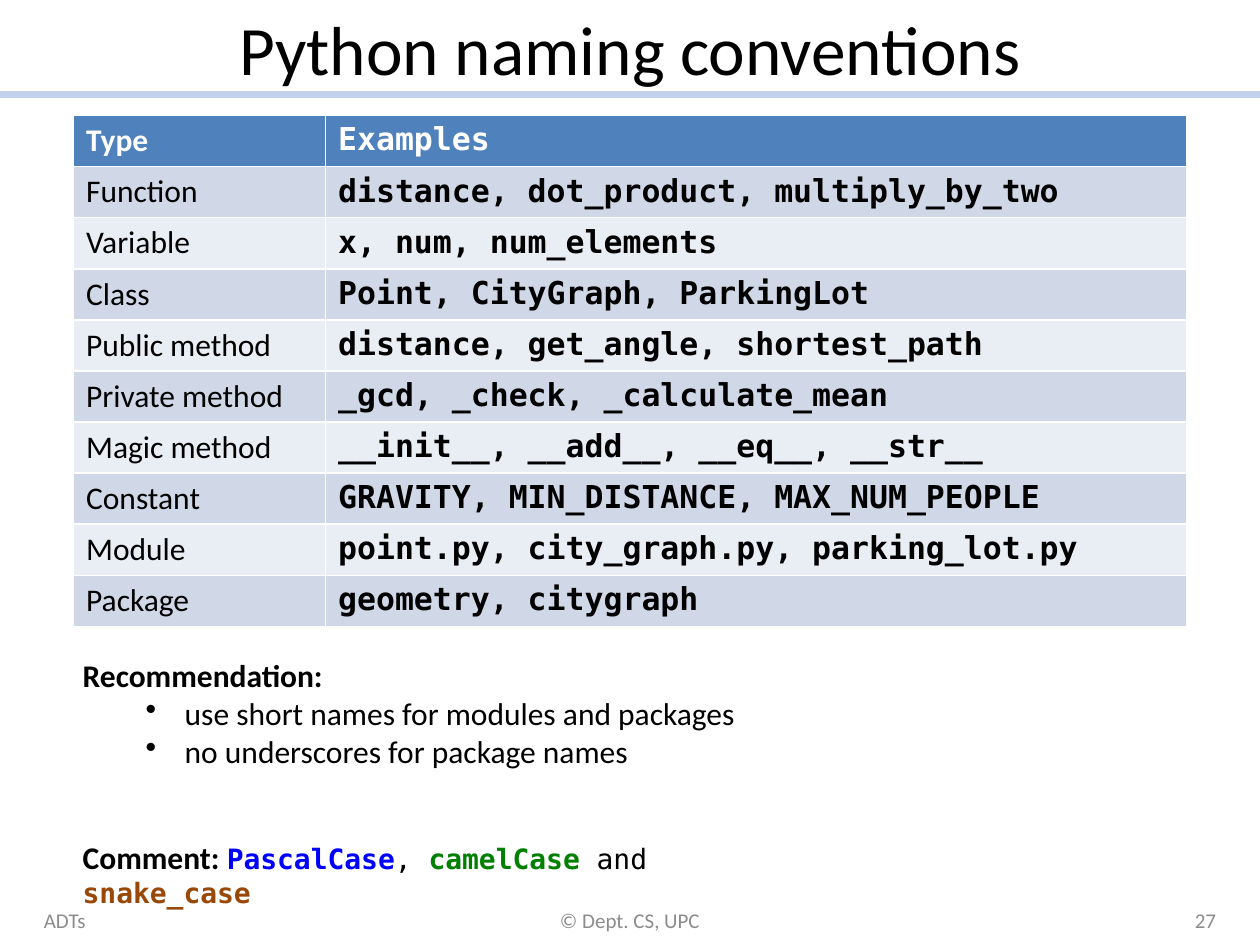
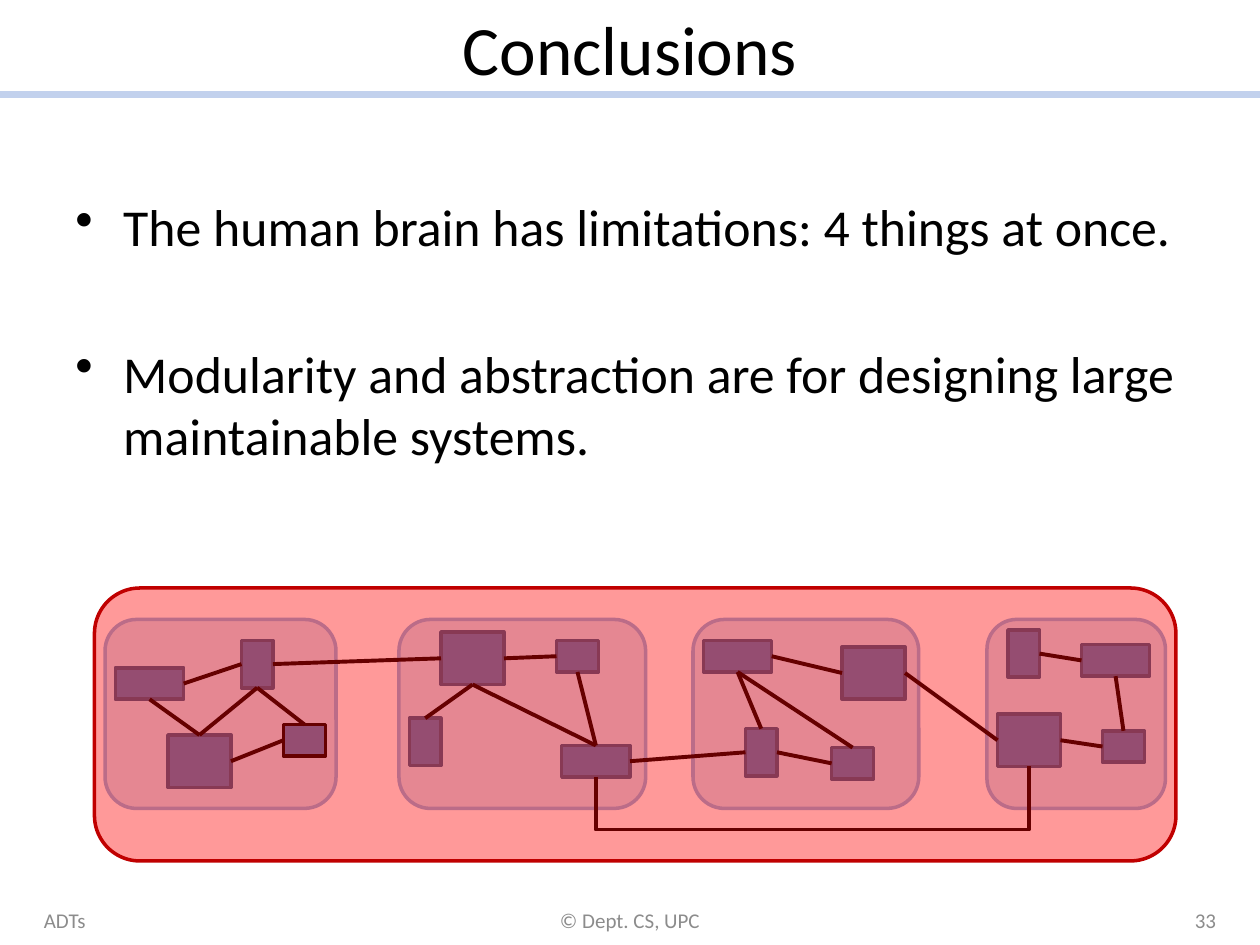
from dataclasses import dataclass

from lxml import etree
from pptx import Presentation
from pptx.dml.color import RGBColor
from pptx.enum.shapes import MSO_CONNECTOR, MSO_SHAPE
from pptx.enum.text import MSO_ANCHOR, PP_ALIGN
from pptx.oxml.ns import qn
from pptx.util import Inches, Pt

STRAIGHT, ELBOW = MSO_CONNECTOR.STRAIGHT, MSO_CONNECTOR.ELBOW
RECT, ROUND_RECT = MSO_SHAPE.RECTANGLE, MSO_SHAPE.ROUNDED_RECTANGLE
TOP_ANCHOR, MIDDLE = MSO_ANCHOR.TOP, MSO_ANCHOR.MIDDLE
LEFT_ALIGN, CENTER, RIGHT_ALIGN = PP_ALIGN.LEFT, PP_ALIGN.CENTER, PP_ALIGN.RIGHT
TOP, LEFT, BOTTOM, RIGHT = range(4)

BLACK = RGBColor(0x00, 0x00, 0x00)
WHITE = RGBColor(0xFF, 0xFF, 0xFF)
GREY = RGBColor(0x8C, 0x8C, 0x8C)
BAND = RGBColor(0xC2, 0xD1, 0xED)
BLUE = RGBColor(0x4F, 0x81, 0xBD)
BLUE_EDGE = RGBColor(0x3A, 0x5F, 0x8C)
ROW_DARK = RGBColor(0xD0, 0xD8, 0xE8)
ROW_LIGHT = RGBColor(0xE9, 0xED, 0xF4)
PALE_BLUE = RGBColor(0xC6, 0xD9, 0xF1)
PALE_EDGE = RGBColor(0x8E, 0xB4, 0xE3)
RED = RGBColor(0xFF, 0x00, 0x00)
DARK_RED = RGBColor(0xC0, 0x00, 0x00)
PASCAL = RGBColor(0x00, 0x00, 0xFF)
CAMEL = RGBColor(0x00, 0x80, 0x00)
SNAKE = RGBColor(0x98, 0x48, 0x07)

SANS, MONO = "Calibri", "DejaVu Sans Mono"
COLS, ROWS = 120, 90
CELL = Inches(10) // COLS

NAMING = [
    ("Type", "Examples"),
    ("Function", "distance, dot_product, multiply_by_two"),
    ("Variable", "x, num, num_elements"),
    ("Class", "Point, CityGraph, ParkingLot"),
    ("Public method", "distance, get_angle, shortest_path"),
    ("Private method", "_gcd, _check, _calculate_mean"),
    ("Magic method", "__init__, __add__, __eq__, __str__"),
    ("Constant", "GRAVITY, MIN_DISTANCE, MAX_NUM_PEOPLE"),
    ("Module", "point.py, city_graph.py, parking_lot.py"),
    ("Package", "geometry, citygraph"),
]

SUBSYSTEM_WIDTHS = (22, 23.5, 21.5, 17)
PART_SIZES = {"small": (4, 3), "wide": (6.5, 3), "big": (6, 5), "tall": (3, 4.5)}
PARTS = [
    {"small": (27, 69), "wide": (11, 63.6), "big": (16, 70), "tall": (23, 61)},
    {"small": (53, 61), "wide": (53.5, 71), "big": (42, 60.2), "tall": (39, 68.4)},
    {"small": (79.2, 71.2), "wide": (67, 61), "big": (80.2, 61.6), "tall": (71, 69.4)},
    {"small": (105, 69.6), "wide": (103, 61.4), "big": (95, 68), "tall": (96, 60)},
]
LINKS = [
    (0, "tall", BOTTOM, 0, "small", TOP),
    (0, "small", LEFT, 0, "big", RIGHT),
    (0, "wide", BOTTOM, 0, "big", TOP),
    (0, "wide", RIGHT, 0, "tall", LEFT),
    (0, "tall", BOTTOM, 0, "big", TOP),
    (1, "big", BOTTOM, 1, "tall", TOP),
    (1, "big", BOTTOM, 1, "wide", TOP),
    (1, "big", RIGHT, 1, "small", LEFT),
    (1, "small", BOTTOM, 1, "wide", TOP),
    (2, "wide", RIGHT, 2, "big", LEFT),
    (2, "wide", BOTTOM, 2, "tall", TOP),
    (2, "tall", RIGHT, 2, "small", LEFT),
    (2, "wide", BOTTOM, 2, "small", TOP),
    (3, "wide", LEFT, 3, "tall", RIGHT),
    (3, "big", RIGHT, 3, "small", LEFT),
    (3, "wide", BOTTOM, 3, "small", TOP),
    (0, "tall", RIGHT, 1, "big", LEFT),
    (1, "wide", RIGHT, 2, "tall", LEFT),
    (2, "big", RIGHT, 3, "big", LEFT),
]


@dataclass
class Run:
    """A piece of text with one look."""
    text: str
    size: float = 18
    bold: bool = False
    color: RGBColor = BLACK
    font: str = SANS


@dataclass
class Para:
    """A paragraph; a bullet has a left margin and a hanging indent in inches."""
    runs: list
    align: PP_ALIGN = LEFT_ALIGN
    bullet: tuple = ()
    before: float = 0


def grid(*cells):
    """Turn grid columns and rows into lengths."""
    return [round(c * CELL) for c in cells]


def fill_para(p, para):
    """Write one paragraph run by run."""
    p.alignment = para.align
    p.space_before = Pt(para.before)
    if para.bullet:
        margin, hang = para.bullet
        pPr = p._p.get_or_add_pPr()
        pPr.set("marL", str(Inches(margin)))
        pPr.set("indent", str(-Inches(hang)))
        etree.SubElement(pPr, qn("a:buChar")).set("char", "•")
    for run in para.runs:
        r = p.add_run()
        r.text = run.text
        r.font.name = run.font
        r.font.size = Pt(run.size)
        r.font.bold = run.bold
        r.font.color.rgb = run.color


def add_text(s, box, paras, anchor=TOP_ANCHOR):
    """Add a wrapping text box."""
    tf = s.shapes.add_textbox(*grid(*box)).text_frame
    tf.word_wrap = True
    tf.vertical_anchor = anchor
    for i, para in enumerate(paras):
        fill_para(tf.add_paragraph() if i else tf.paragraphs[0], para)


def add_box(s, kind, box, fill, edge, width=2, alpha=100):
    """Add a filled shape with an edge."""
    sp = s.shapes.add_shape(kind, *grid(*box))
    sp.shadow.inherit = False
    sp.fill.solid()
    sp.fill.fore_color.rgb = fill
    sp.line.color.rgb = edge
    sp.line.width = Pt(width)
    if alpha < 100:
        color = sp._element.spPr.find(qn("a:solidFill"))[0]
        etree.SubElement(color, qn("a:alpha")).set("val", str(alpha * 1000))
    return sp


def add_line(s, ends=(0, 0, 0, 0), color=BLACK, width=2.25, kind=STRAIGHT):
    """Add a connector without a shadow."""
    line = s.shapes.add_connector(kind, *ends)
    line.line.color.rgb = color
    line.line.width = Pt(width)
    etree.SubElement(line._element.spPr, qn("a:effectLst"))
    return line


def add_under_link(s, start, end, drop):
    """Link the bottoms of two shapes by a path that runs below both."""
    x1, y1 = start.left + start.width // 2, start.top + start.height
    x2, y2 = end.left + end.width // 2, end.top + end.height
    span, rise = x2 - x1, y1 - y2
    left, top = (x1 + x2 - rise) // 2, (y1 + y2 - span) // 2
    line = add_line(s, (left + rise, top + span, left, top), kind=ELBOW)
    spPr = line._element.spPr
    spPr.find(qn("a:xfrm")).set("rot", "5400000")
    geom = spPr.find(qn("a:prstGeom"))
    guide = etree.SubElement(geom.find(qn("a:avLst")), qn("a:gd"))
    guide.set("name", "adj1")
    guide.set("fmla", f"val {round(-drop * CELL / rise * 100000)}")


def add_naming_table(s):
    """Add the table of naming conventions."""
    frame = s.shapes.add_table(len(NAMING), 2, *grid(7, 11, 106, 48.7))
    table = frame.table
    for column, width in zip(table.columns, grid(24, 82)):
        column.width = width
    for i, row in enumerate(NAMING):
        header = i == 0
        fill = BLUE if header else (ROW_DARK if i % 2 else ROW_LIGHT)
        for j, text in enumerate(row):
            cell = table.cell(i, j)
            cell.fill.solid()
            cell.fill.fore_color.rgb = fill
            run = Run(text, bold=header or j == 1,
                      color=WHITE if header else BLACK, font=(SANS, MONO)[j])
            fill_para(cell.text_frame.paragraphs[0], Para([run]))


def add_network(s):
    """Add the subsystems, their parts and the links between parts."""
    for i, width in enumerate(SUBSYSTEM_WIDTHS):
        add_box(s, ROUND_RECT, (10 + 28 * i, 59, width, 18),
                PALE_BLUE, PALE_EDGE, alpha=75)
    parts = {}
    for i, places in enumerate(PARTS):
        for name, place in places.items():
            parts[i, name] = add_box(s, RECT, place + PART_SIZES[name], BLUE, BLUE_EDGE)
    highlighted = parts[0, "small"]
    highlighted.line.color.rgb = BLACK
    highlighted.line.width = Pt(2.25)
    for i, start, start_side, j, end, end_side in LINKS:
        line = add_line(s)
        line.begin_connect(parts[i, start], start_side)
        line.end_connect(parts[j, end], end_side)
    add_under_link(s, parts[1, "wide"], parts[3, "big"], 5)
    add_box(s, ROUND_RECT, (9, 56, 103, 26), RED, DARK_RED, alpha=40)


def add_slide(prs, title, number):
    """Add a slide with the shared title, band and footers."""
    s = prs.slides.add_slide(prs.slide_layouts[6])
    add_line(s, grid(0, 9, COLS, 9), BAND, 4)
    add_text(s, (6, 0, 108, 9), [Para([Run(title, 39.6)], CENTER)], MIDDLE)
    footers = [
        (3, 28, "ADTs", LEFT_ALIGN),
        (41, 38, "© Dept. CS, UPC", CENTER),
        (89, 28, str(number), RIGHT_ALIGN),
    ]
    for col, width, text, align in footers:
        add_text(s, (col, 85.2, width, 4.8),
                 [Para([Run(text, 12, color=GREY)], align)], MIDDLE)
    return s


def naming_slide(prs):
    """Build the slide on naming conventions."""
    s = add_slide(prs, "Python naming conventions", 27)
    add_naming_table(s)
    advice = ("use short names for modules and packages",
              "no underscores for package names")
    add_text(s, (6.7, 61.9, 65.3, 12.1),
             [Para([Run("Recommendation:", bold=True)])]
             + [Para([Run(text)], bullet=(0.81, 0.31)) for text in advice])
    add_text(s, (6.7, 79.2, 70.8, 4.8), [Para([
        Run("Comment: ", bold=True),
        Run("PascalCase", 16, True, PASCAL, MONO),
        Run(", ", 16, font=MONO),
        Run("camelCase", 16, True, CAMEL, MONO),
        Run(" and ", 16, font=MONO),
        Run("snake_case", 16, True, SNAKE, MONO),
    ])])


def conclusions_slide(prs):
    """Build the closing slide."""
    s = add_slide(prs, "Conclusions", 33)
    points = [
        ("The human brain has limitations: 4 things at once.", 6),
        ("Modularity and abstraction are for designing large maintainable systems.", 48),
    ]
    add_text(s, (6, 18, 108, 26.3),
             [Para([Run(text, 29.6)], bullet=(0.38, 0.38), before=before)
              for text, before in points])
    add_network(s)


def main():
    """Build and save the presentation."""
    prs = Presentation()
    prs.slide_width, prs.slide_height = grid(COLS, ROWS)
    naming_slide(prs)
    conclusions_slide(prs)
    prs.save("out.pptx")


if __name__ == "__main__":
    main()
